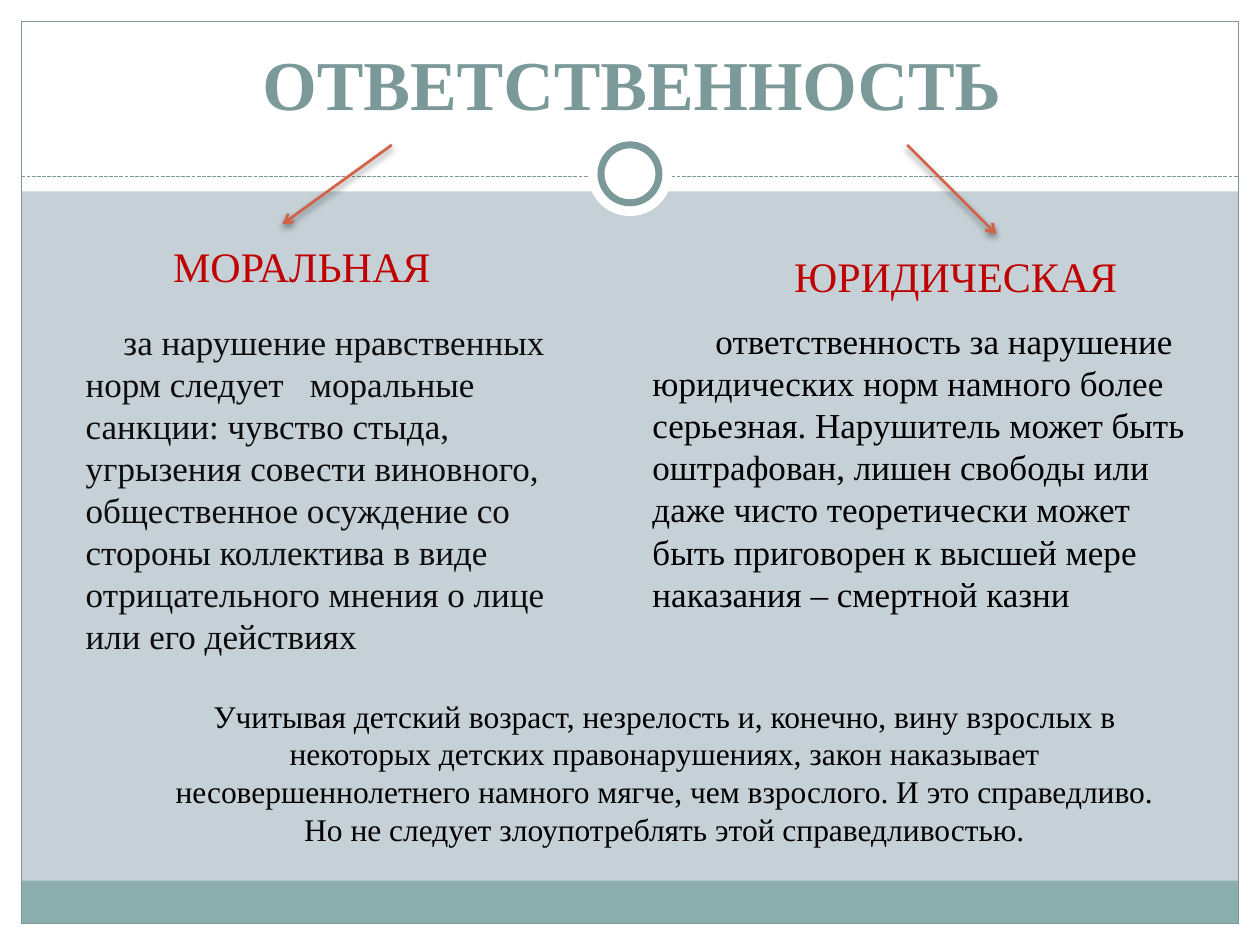
from lxml.etree import SubElement
from pptx import Presentation
from pptx.dml.color import RGBColor
from pptx.enum.dml import MSO_LINE
from pptx.enum.shapes import MSO_CONNECTOR, MSO_SHAPE
from pptx.enum.text import MSO_ANCHOR, MSO_AUTO_SIZE, PP_ALIGN
from pptx.oxml.ns import qn
from pptx.util import Inches, Pt

WIDTH, HEIGHT = 10, 7.5
MARGIN = 0.17
FONT = "Times New Roman"

WHITE = RGBColor(0xFF, 0xFF, 0xFF)
BLACK = RGBColor(0x00, 0x00, 0x00)
NEAR_BLACK = RGBColor(0x0D, 0x0D, 0x0D)
BACKGROUND = RGBColor(0xC5, 0xD1, 0xD7)
BAND = RGBColor(0x8C, 0xAD, 0xAE)
TEAL = RGBColor(0x7C, 0x99, 0x9A)
ORANGE = RGBColor(0xD1, 0x63, 0x49)
RED = RGBColor(0xC0, 0x00, 0x00)

MORAL = (
    "за нарушение нравственных норм следует   моральные санкции: чувство стыда, "
    "угрызения совести виновного, общественное осуждение со стороны коллектива "
    "в виде отрицательного мнения о лице или его действиях"
)
LEGAL = (
    "ответственность за нарушение юридических норм намного более серьезная. "
    "Нарушитель может быть оштрафован, лишен свободы или даже чисто теоретически "
    "может быть приговорен к высшей мере наказания – смертной казни"
)
CONCLUSION = (
    "Учитывая детский возраст, незрелость и, конечно, вину взрослых в некоторых "
    "детских правонарушениях, закон наказывает несовершеннолетнего намного мягче, "
    "чем взрослого. И это справедливо. Но не следует злоупотреблять этой "
    "справедливостью."
)


def set_all(target, values):
    for name, value in values.items():
        setattr(target, name, value)


def place(shape, box):
    names = ("left", "top", "width", "height")
    set_all(shape, dict(zip(names, map(Inches, box))))


def add_panel(slide, kind, box, fill=None, line=None, line_width=0.75):
    shape = slide.shapes.add_shape(kind, *map(Inches, box))
    shape.shadow.inherit = False
    if fill is None:
        shape.fill.background()
    else:
        shape.fill.solid()
        shape.fill.fore_color.rgb = fill
    if line is None:
        shape.line.fill.background()
    else:
        shape.line.color.rgb = line
        shape.line.width = Pt(line_width)


def add_line(slide, start, end, color, width):
    """Draw a straight line and return it with its empty effect list."""
    line = slide.shapes.add_connector(
        MSO_CONNECTOR.STRAIGHT, *map(Inches, start + end))
    line.line.color.rgb = color
    line.line.width = Pt(width)
    effects = SubElement(line._element.spPr, qn("a:effectLst"))
    return line, effects


def add_arrow(slide, start, end):
    arrow, effects = add_line(slide, start, end, ORANGE, 1.57)
    SubElement(arrow.line._get_or_add_ln(), qn("a:tailEnd"), type="arrow")
    shadow = SubElement(effects, qn("a:outerShdw"), blurRad=str(Pt(4)),
                        dist=str(Pt(2)), dir="5400000", rotWithShape="0")
    color = SubElement(shadow, qn("a:srgbClr"), val=str(BLACK))
    SubElement(color, qn("a:alpha"), val="45000")


def write(shape, text, size, color, align=PP_ALIGN.LEFT, bold=False,
          anchor=MSO_ANCHOR.TOP, margin=0, indent=0):
    frame = shape.text_frame
    set_all(frame, {"text": text, "word_wrap": True,
                    "auto_size": MSO_AUTO_SIZE.NONE, "vertical_anchor": anchor})
    paragraph = frame.paragraphs[0]
    paragraph.alignment = align
    set_all(paragraph.runs[0].font, {"name": FONT, "size": Pt(size), "bold": bold})
    paragraph.runs[0].font.color.rgb = color
    properties = paragraph._p.get_or_add_pPr()
    properties.set("marL", str(Inches(margin)))
    properties.set("indent", str(Inches(indent)))
    SubElement(properties, qn("a:buNone"))


def fill_placeholder(slide, placeholder, box, text, size, color, **layout):
    slide.shapes._spTree.append(placeholder._element)  # in front of the frame
    place(placeholder, box)
    write(placeholder, text, size, color, **layout)


def add_text(slide, box, text, size, color, **layout):
    write(slide.shapes.add_textbox(*map(Inches, box)), text, size, color, **layout)


def add_ring(slide, center_y):
    for size, line in ((0.67, None), (0.46, TEAL)):
        box = ((WIDTH - size) / 2, center_y - size / 2, size, size)
        add_panel(slide, MSO_SHAPE.OVAL, box, WHITE, line, 4)


def add_frame(slide):
    right, bottom = WIDTH - MARGIN, HEIGHT - MARGIN
    inner_width = WIDTH - 2 * MARGIN
    # White borders and header
    for box in ((0, bottom, WIDTH, MARGIN), (0, 0, WIDTH, 1.52),
                (0, 0, MARGIN, HEIGHT), (right, 0, MARGIN, HEIGHT)):
        add_panel(slide, MSO_SHAPE.RECTANGLE, box, WHITE)
    # Footer band and outline
    add_panel(slide, MSO_SHAPE.RECTANGLE,
              (MARGIN, bottom - 0.34, inner_width, 0.34), BAND)
    add_panel(slide, MSO_SHAPE.RECTANGLE,
              (MARGIN, MARGIN, inner_width, HEIGHT - 2 * MARGIN), line=TEAL)
    # Dashed divider with the ring
    divider, _ = add_line(slide, (MARGIN, 1.4), (right, 1.4), TEAL, 0.75)
    divider.line.dash_style = MSO_LINE.SQUARE_DOT
    add_ring(slide, 1.38)


def main():
    presentation = Presentation()
    presentation.slide_width = Inches(WIDTH)
    presentation.slide_height = Inches(HEIGHT)
    slide = presentation.slides.add_slide(presentation.slide_layouts[1])
    slide.background.fill.solid()
    slide.background.fill.fore_color.rgb = BACKGROUND
    title, body = slide.placeholders
    add_frame(slide)

    # Title and the left column
    fill_placeholder(slide, title, (0.35, 0.21, 9.33, 0.83), "ОТВЕТСТВЕННОСТЬ",
                     40, TEAL, align=PP_ALIGN.CENTER, bold=True,
                     anchor=MSO_ANCHOR.BOTTOM)
    fill_placeholder(slide, body, (0.28, 2.49, 4.57, 2.68), MORAL,
                     20, NEAR_BLACK, margin=0.3, indent=0.3)

    # Arrows from the title to the two kinds
    add_arrow(slide, (3.11, 1.15), (2.24, 1.78))
    add_arrow(slide, (7.2, 1.15), (7.91, 1.86))

    # Right column, conclusion and column headings
    add_text(slide, (5.08, 2.49, 4.49, 2.46), LEGAL, 20, BLACK, indent=0.5)
    add_text(slide, (1.22, 5.48, 8.11, 1.31), CONCLUSION, 18, BLACK,
             align=PP_ALIGN.CENTER)
    for left, top, heading in ((0.75, 1.86, "МОРАЛЬНАЯ"),
                               (5.94, 1.94, "ЮРИДИЧЕСКАЯ")):
        add_text(slide, (left, top, 3.29, 0.5), heading, 24, RED,
                 align=PP_ALIGN.CENTER)

    presentation.save("out.pptx")


if __name__ == "__main__":
    main()
